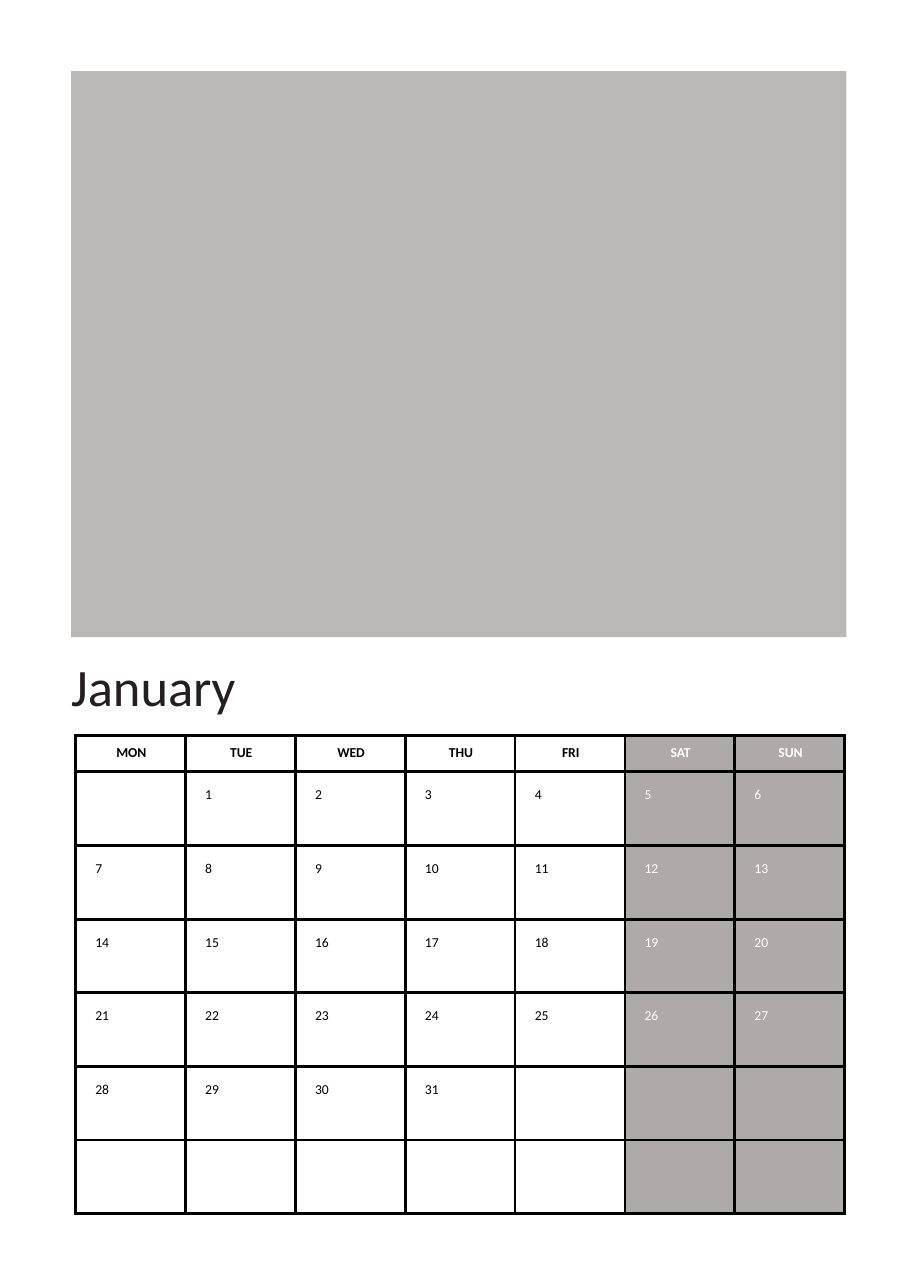
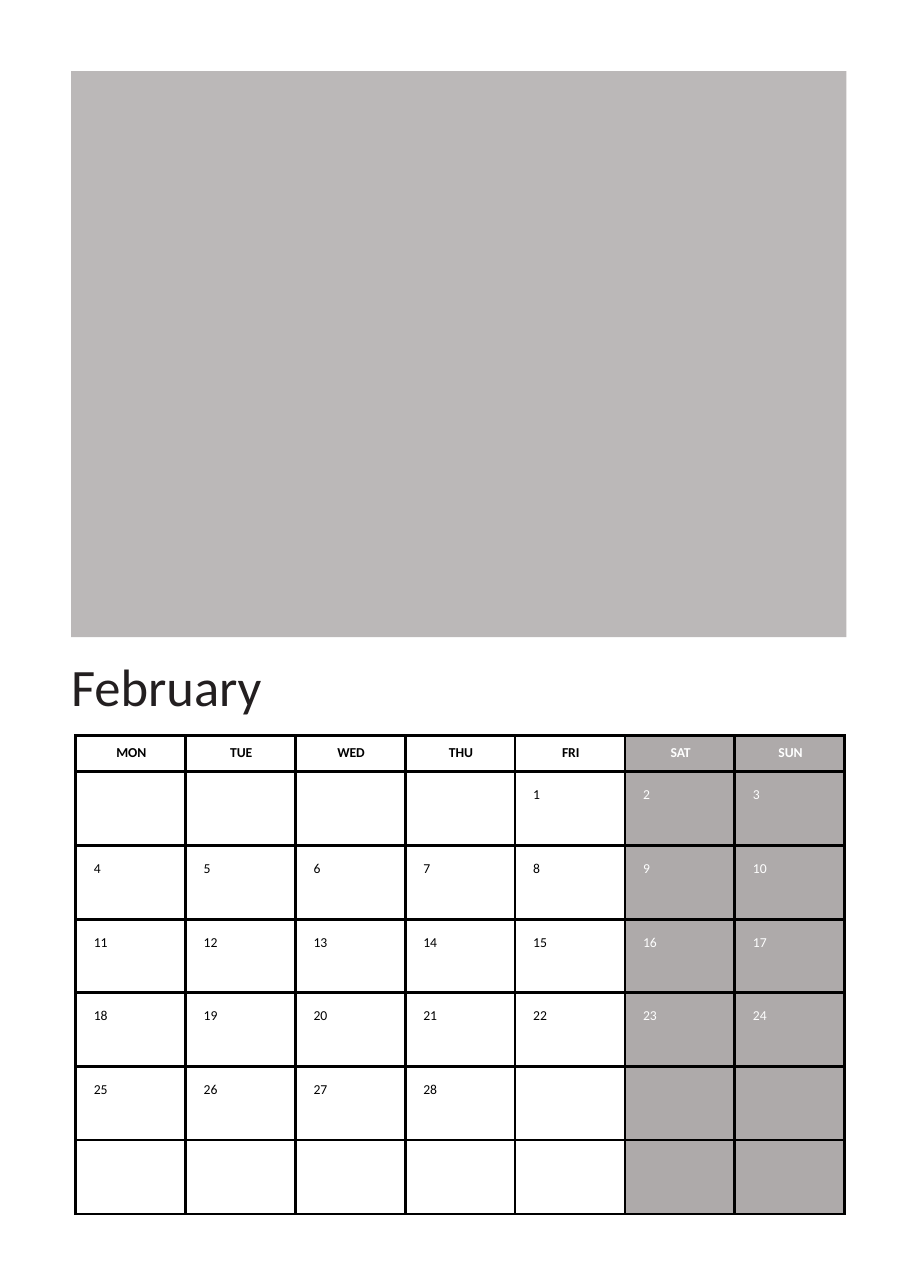
"""Build two monthly calendar pages with a photo area, a month title and a day grid."""
from pptx import Presentation, util as u
from pptx.dml.color import RGBColor
from pptx.enum import shapes, text
from pptx.oxml import ns
from lxml import etree

MONTHS = [
    {"name": "January", "first_column": 1, "days": 31, "indent": 0.13, "title_width": 1.12, "bottom_line": 1.5},
    {"name": "February", "first_column": 4, "days": 28, "indent": 0.12, "title_width": 1.29, "bottom_line": 1},
]
WEEKDAYS = ["MON", "TUE", "WED", "THU", "FRI", "SAT", "SUN"]
WEEKEND = ("SAT", "SUN")
WEEKS = 6
COLORS = {"photo": "BBB8B8", "title": "231F20", "weekend": "AEAAAA", "ink": "000000", "paper": "FFFFFF"}
FONT = "Calibri"
PAGE = (6.07, 8.51)
PHOTO = (0.47, 0.47, 5.12, 3.74)
TITLE_LEFT, TITLE_TOP, TITLE_HEIGHT = 0.46, 4.31, 0.44
GRID = (0.5, 4.86, 5.08, 3.16)
HEADER_HEIGHT = 0.24
GRID_LINE = 1.5


def color(name):
    return RGBColor.from_string(COLORS[name])


def inches(values):
    return [u.Inches(value) for value in values]


def set_all(target, values):
    for name, value in values.items():
        setattr(target, name, value)


def set_margins(target, left, top):
    set_all(target, {"margin_left": u.Inches(left), "margin_top": u.Inches(top),
                     "margin_right": 0, "margin_bottom": 0})


def write(paragraph, content, size, ink, bold=False):
    run = paragraph.add_run()
    run.text = content
    set_all(run.font, {"name": FONT, "size": u.Pt(size), "bold": bold})
    run.font.color.rgb = color(ink)


def add_photo_area(slide):
    shape = slide.shapes.add_shape(shapes.MSO_SHAPE.RECTANGLE, *inches(PHOTO))
    shape.shadow.inherit = False
    shape.fill.solid()
    shape.fill.fore_color.rgb = color("photo")
    shape.line.fill.background()


def add_title(slide, month):
    box = slide.shapes.add_textbox(*inches((TITLE_LEFT, TITLE_TOP, month["title_width"], TITLE_HEIGHT)))
    frame = box.text_frame
    set_margins(frame, 0.01, 0.01)
    set_all(frame, {"word_wrap": False, "auto_size": text.MSO_AUTO_SIZE.SHAPE_TO_FIT_TEXT})
    paragraph = frame.paragraphs[0]
    paragraph.space_before = u.Pt(1)
    write(paragraph, month["name"], 25, "title")


def style_cell(cell, fill, bottom_line):
    properties = cell._tc.get_or_add_tcPr()
    widths = {"lnL": GRID_LINE, "lnR": GRID_LINE, "lnT": GRID_LINE, "lnB": bottom_line}
    for side, width in widths.items():
        line = etree.SubElement(properties, ns.qn(f"a:{side}"), w=str(u.Pt(width)))
        solid = etree.SubElement(line, ns.qn("a:solidFill"))
        etree.SubElement(solid, ns.qn("a:srgbClr"), val=COLORS["ink"])
    cell.fill.solid()
    cell.fill.fore_color.rgb = color(fill)


def add_day_grid(slide, month):
    rows, columns = WEEKS + 1, len(WEEKDAYS)
    table = slide.shapes.add_table(rows, columns, *inches(GRID)).table
    set_all(table, {"first_row": False, "horz_banding": False})
    for column in table.columns:
        column.width = u.Inches(GRID[2] / columns)
    for index, row in enumerate(table.rows):
        row.height = u.Inches((GRID[3] - HEADER_HEIGHT) / WEEKS if index else HEADER_HEIGHT)
        for position, weekday in enumerate(WEEKDAYS):
            cell = row.cells[position]
            weekend = weekday in WEEKEND
            style_cell(cell, "weekend" if weekend else "paper",
                       month["bottom_line"] if index == WEEKS else GRID_LINE)
            paragraph = cell.text_frame.paragraphs[0]
            ink = "paper" if weekend else "ink"
            day = (index - 1) * columns + position - month["first_column"] + 1
            if index == 0:
                set_margins(cell, 0.01, 0.06)
                paragraph.alignment = text.PP_ALIGN.CENTER
                write(paragraph, weekday, 6.5, ink, bold=True)
            elif 1 <= day <= month["days"]:
                set_margins(cell, month["indent"], 0.1)
                write(paragraph, str(day), 6.5, ink)


def main():
    presentation = Presentation()
    presentation.slide_width, presentation.slide_height = inches(PAGE)
    for month in MONTHS:
        slide = presentation.slides.add_slide(presentation.slide_layouts[6])
        add_title(slide, month)
        add_photo_area(slide)
        add_day_grid(slide, month)
    presentation.save("out.pptx")


if __name__ == "__main__":
    main()
